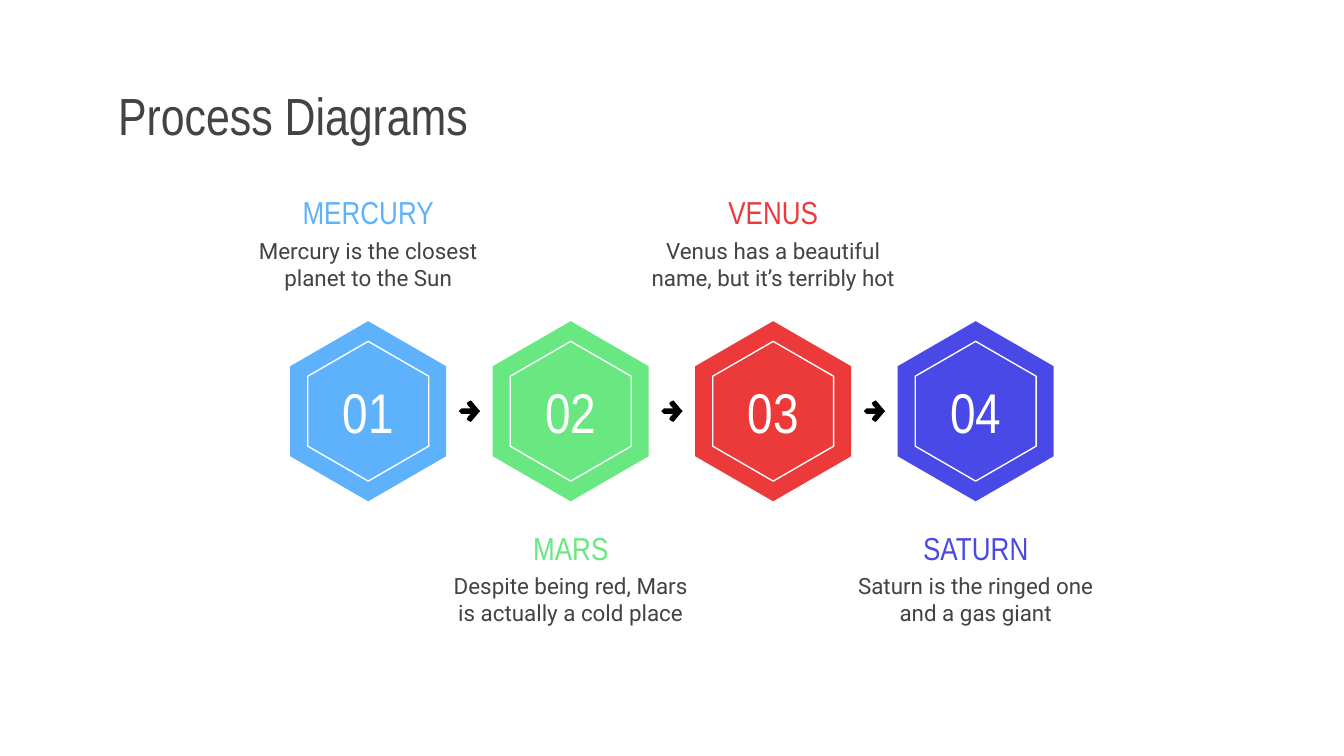
from pptx import Presentation
from pptx.dml.color import RGBColor
from pptx.enum.text import MSO_ANCHOR, PP_ALIGN
from pptx.util import Inches, Pt

MIDDLE = MSO_ANCHOR.MIDDLE
LEFT = PP_ALIGN.LEFT
CENTER = PP_ALIGN.CENTER

WHITE = RGBColor(0xFF, 0xFF, 0xFF)
BLACK = RGBColor(0x00, 0x00, 0x00)
GRAY = RGBColor(0x43, 0x43, 0x43)
BLUE = RGBColor(0x5E, 0xB2, 0xFC)
GREEN = RGBColor(0x69, 0xE7, 0x81)
RED = RGBColor(0xEC, 0x3A, 0x3B)
INDIGO = RGBColor(0x49, 0x49, 0xE7)

HEADING_FONT = "Arial Narrow"
BODY_FONT = "Roboto"

TITLE = "Process Diagrams"
STEPS = [
    ("01", "MERCURY", "Mercury is the closest planet to the Sun", BLUE),
    ("02", "MARS", "Despite being red, Mars is actually a cold place", GREEN),
    ("03", "VENUS", "Venus has a beautiful name, but it’s terribly hot", RED),
    ("04", "SATURN", "Saturn is the ringed one and a gas giant", INDIGO),
]

FIRST_CENTER, LAST_CENTER, ROW_CENTER = 2.74, 7.26, 3.06
PITCH = (LAST_CENTER - FIRST_CENTER) / (len(STEPS) - 1)
TEXT_TOPS = [(1.26, 1.65), (3.76, 4.14)]
NAME_WIDTH, DETAIL_WIDTH, TEXT_HEIGHT = 1.91, 2.04, 0.63

ARROW_UPPER = [
    (0.08, 0), (0.07, -0.01), (0.02, -0.07), (0.01, -0.08), (-0.01, -0.07),
    (-0.02, -0.06), (-0.01, -0.04), (0.01, -0.02), (-0.06, -0.02),
    (-0.07, -0.01), (-0.08, 0),
]
ARROW = ARROW_UPPER + [(x, -y) for x, y in ARROW_UPPER[-2:0:-1]]


def hexagon(width, height):
    x, y = width / 2, height / 2
    return [(0, -y), (-x, -y / 2), (-x, y / 2), (0, y), (x, y / 2), (x, -y / 2)]


def add_outline(shapes, center_x, points, fill=None, line=None):
    places = [(Inches(center_x + x), Inches(ROW_CENTER + y)) for x, y in points]
    builder = shapes.build_freeform(*places[0])
    builder.add_line_segments(places[1:], close=True)
    shape = builder.convert_to_shape()
    shape.shadow.inherit = False
    if fill is None:
        shape.fill.background()
    else:
        shape.fill.solid()
        shape.fill.fore_color.rgb = fill
    if line is None:
        shape.line.fill.background()
    else:
        shape.line.color.rgb = line
        shape.line.width = Pt(0.75)
    return shape


def write(shape, text, size, font, color, align=CENTER):
    frame = shape.text_frame
    frame.word_wrap = True
    frame.vertical_anchor = MIDDLE
    frame.margin_left = frame.margin_right = Inches(0.1)
    frame.margin_top = frame.margin_bottom = Inches(0.1)
    para = frame.paragraphs[0]
    para.alignment = align
    span = para.add_run()
    span.text = text
    span.font.size = Pt(size)
    span.font.name = font
    span.font.color.rgb = color


def add_label(shapes, center_x, top, width, *style):
    box = shapes.add_textbox(
        Inches(center_x - width / 2), Inches(top), Inches(width), Inches(TEXT_HEIGHT)
    )
    write(box, *style)


def add_step(page, center_x, tops, number, name, detail, color):
    shapes = page.shapes.add_group_shape().shapes
    name_top, detail_top = tops
    badge = add_outline(shapes, center_x, hexagon(1.16, 1.34), fill=color)
    write(badge, number, 30, HEADING_FONT, WHITE)
    add_outline(shapes, center_x, hexagon(0.9, 1.04), line=WHITE)
    add_label(shapes, center_x, name_top, NAME_WIDTH, name, 17, HEADING_FONT, color)
    add_label(shapes, center_x, detail_top, DETAIL_WIDTH, detail, 12, BODY_FONT, GRAY)


def main():
    deck = Presentation()
    deck.slide_width = Inches(10)
    deck.slide_height = deck.slide_width * 9 // 16
    page = deck.slides.add_slide(deck.slide_layouts[6])

    title = page.shapes.add_textbox(
        Inches(0.78), Inches(0.59), Inches(8.45), Inches(0.53)
    )
    write(title, TITLE, 28, HEADING_FONT, GRAY, LEFT)

    for index, step in enumerate(STEPS):
        center_x = FIRST_CENTER + index * PITCH
        add_step(page, center_x, TEXT_TOPS[index % 2], *step)
        if index < len(STEPS) - 1:
            add_outline(page.shapes, center_x + PITCH / 2, ARROW, fill=BLACK)

    deck.save("out.pptx")


if __name__ == "__main__":
    main()
